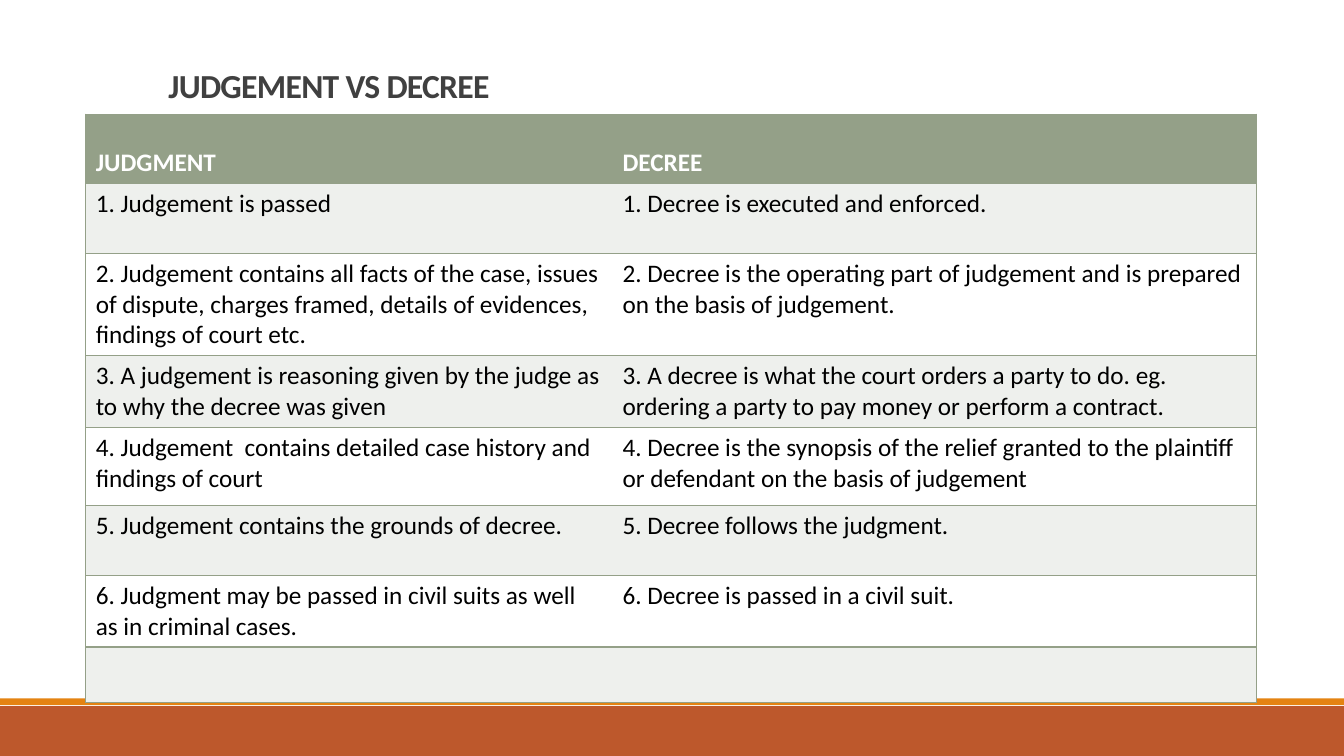
from dataclasses import dataclass
from lxml.etree import SubElement
from pptx import Presentation
from pptx.dml.color import RGBColor
from pptx.enum.shapes import MSO_SHAPE
from pptx.enum.text import MSO_ANCHOR, MSO_AUTO_SIZE, PP_ALIGN
from pptx.oxml.ns import qn
from pptx.util import Inches, Pt

WIDTH, HEIGHT = Inches(13.33), Inches(7.5)


@dataclass(frozen=True)
class Theme:
    """Hold the colours and type sizes."""
    font: str = "Calibri"
    title_size: int = 24
    table_size: int = 18
    title: str = "404040"
    header: str = "94A088"
    header_text: str = "FFFFFF"
    body_text: str = "000000"
    stripes: tuple = ("EEF0ED", "FFFFFF")
    footer: str = "BD582C"
    accent: str = "E48312"


@dataclass(frozen=True)
class Box:
    """Describe an area in hundredths of the slide's width and height."""
    left: float
    top: float
    width: float
    height: float

    def lengths(self):
        """Return left, top, width and height as slide lengths."""
        return (across(self.left), down(self.top),
                across(self.width), down(self.height))


THEME = Theme()
COLUMN_SHARES = (0.45, 0.55)
ROW_HEIGHTS = (9.2, 9.2, 12.3, 9.2, 10.4, 9.2, 9.2, 7.3)
ROWS = (
    ("JUDGMENT", "DECREE"),
    ("1. Judgement is passed", "1. Decree is executed and enforced."),
    ("2. Judgement contains all facts of the case, issues of dispute, "
     "charges framed, details of evidences, findings of court etc.",
     "2. Decree is the operating part of judgement and is prepared "
     "on the basis of judgement."),
    ("3. A judgement is reasoning given by the judge as to why the decree was given",
     "3. A decree is what the court orders a party to do. eg. "
     "ordering a party to pay money or perform a contract."),
    ("4. Judgement  contains detailed case history and findings of court",
     "4. Decree is the synopsis of the relief granted to the plaintiff "
     "or defendant on the basis of judgement"),
    ("5. Judgement contains the grounds of decree.", "5. Decree follows the judgment."),
    ("6. Judgment may be passed in civil suits as well as in criminal cases.",
     "6. Decree is passed in a civil suit."),
    ("", ""),
)


def across(share):
    """Convert hundredths of the slide's width to a length."""
    return round(WIDTH * share / 100)


def down(share):
    """Convert hundredths of the slide's height to a length."""
    return round(HEIGHT * share / 100)


def add_span(para, text, size, colour, bold):
    """Add a formatted run to a paragraph."""
    span = para.add_run()
    span.text = text
    span.font.name = THEME.font
    span.font.size = Pt(size)
    span.font.bold = bold
    span.font.color.rgb = RGBColor.from_string(colour)
    return span


def add_band(page, box, colour):
    """Draw a plain filled band."""
    band = page.shapes.add_shape(MSO_SHAPE.RECTANGLE, *box.lengths())
    band.shadow.inherit = False
    band.fill.solid()
    band.fill.fore_color.rgb = RGBColor.from_string(colour)
    band.line.fill.background()


def add_footer(page, box):
    """Draw the footer with a thin accent band along its top."""
    accent = 1
    add_band(page, Box(box.left, box.top + accent, box.width, box.height - accent),
             THEME.footer)
    add_band(page, Box(box.left, box.top, box.width, accent - 0.12), THEME.accent)


def add_title(page, box, text):
    """Place and format the title placeholder."""
    title = page.shapes.title
    title.left, title.top, title.width, title.height = box.lengths()
    frame = title.text_frame
    frame.word_wrap = True
    frame.auto_size = MSO_AUTO_SIZE.NONE
    frame.vertical_anchor = MSO_ANCHOR.BOTTOM
    para = frame.paragraphs[0]
    para.alignment = PP_ALIGN.LEFT
    para.line_spacing = 0.85
    span = add_span(para, text, THEME.title_size, THEME.title, True)
    span.font._element.set("spc", "-50")


def set_borders(cell, sides):
    """Rule the given sides of a cell and clear the others."""
    properties = cell._tc.get_or_add_tcPr()
    for position, side in enumerate("LRTB"):
        line = SubElement(properties, qn(f"a:ln{side}"), w=str(Pt(1)))
        properties.insert(position, line)
        if side in sides:
            fill = SubElement(line, qn("a:solidFill"))
            SubElement(fill, qn("a:srgbClr"), val=THEME.header)
        else:
            SubElement(line, qn("a:noFill"))


def fill_cell(cell, text, is_header, fill, sides):
    """Format one table cell and write its text."""
    cell.fill.solid()
    cell.fill.fore_color.rgb = RGBColor.from_string(fill)
    cell.vertical_anchor = MSO_ANCHOR.BOTTOM if is_header else MSO_ANCHOR.TOP
    set_borders(cell, sides)
    if text:
        colour = THEME.header_text if is_header else THEME.body_text
        add_span(cell.text_frame.paragraphs[0], text, THEME.table_size, colour, is_header)


def add_comparison(page, box):
    """Build the two-column comparison table."""
    table = page.shapes.add_table(len(ROWS), len(COLUMN_SHARES), *box.lengths()).table
    table.first_row = table.horz_banding = False
    for column, share in zip(table.columns, COLUMN_SHARES):
        column.width = across(box.width * share)
    for number, (row, height, texts) in enumerate(zip(table.rows, ROW_HEIGHTS, ROWS)):
        row.height = down(height)
        is_header = number == 0
        fill = THEME.header if is_header else THEME.stripes[(number - 1) % 2]
        for cell, text, sides in zip(row.cells, texts, ("LTB", "RTB")):
            fill_cell(cell, text, is_header, fill, sides)


def build_comparison_slide(deck):
    """Add the slide comparing judgement and decree."""
    page = deck.slides.add_slide(deck.slide_layouts[5])
    add_footer(page, Box(0, 92.4, 100, 7.6))
    add_title(page, Box(11.78, 6.67, 78.77, 8), "JUDGEMENT VS DECREE")
    add_comparison(page, Box(6.38, 15.1, 87.1, sum(ROW_HEIGHTS)))


def main():
    """Create and save the deck."""
    deck = Presentation()
    deck.slide_width, deck.slide_height = WIDTH, HEIGHT
    build_comparison_slide(deck)
    deck.save("out.pptx")


if __name__ == "__main__":
    main()
